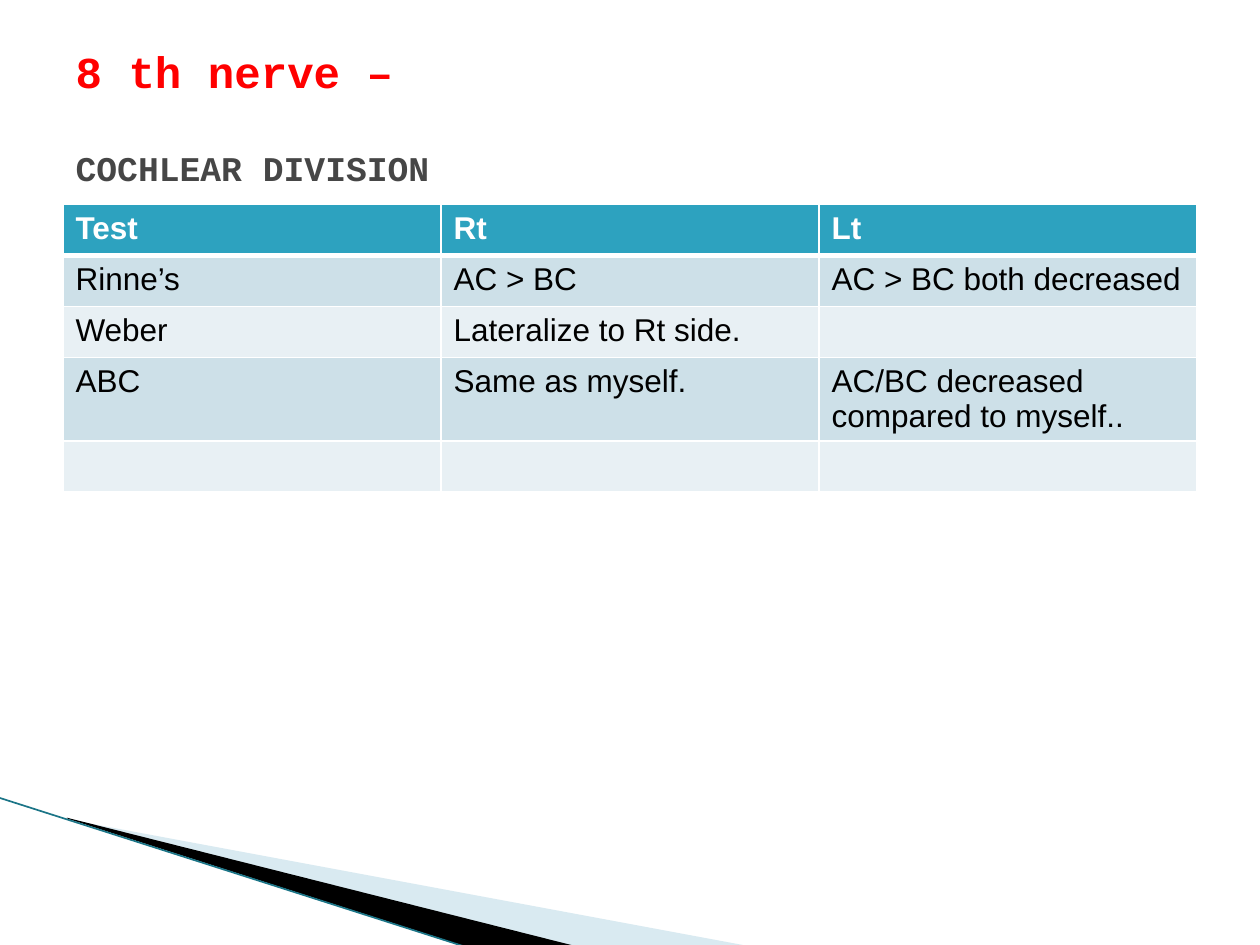
from lxml import etree
from pptx import Presentation
from pptx.dml.color import RGBColor
from pptx.enum import shapes, text
from pptx.oxml.ns import qn
from pptx.util import Pt

HEADS = [("8 th nerve –", 25.2, "FF0000", 0),
         ("COCHLEAR DIVISION", 19.8, "464646", 28.5)]
ROWS = [("Test", "Rt", "Lt"),
        ("Rinne’s", "AC > BC", "AC > BC both decreased"),
        ("Weber", "Lateralize to Rt side.", ""),
        ("ABC", "Same as myself.", "AC/BC decreased compared to myself.."),
        ("", "", "")]
HEIGHTS = [29.2, 29.2, 29.2, 47.4, 29.2]
BANDS = ["E8F0F4", "CDE0E8"]
WEDGES = [([(39.6, 468.4), (428.4, 540.7), (328.3, 540.7), (39.6, 468)], "A0CBDC", 40),
          ([(38.2, 467.3), (329, 540.7), (267.8, 541.4), (38.9, 468)], "000000", 100)]
EDGE = (-0.7, 455.8, 267.1, 541.4)


def rgb(code):
    return RGBColor.from_string(code)


def paint(fill, code):
    fill.solid()
    fill.fore_color.rgb = rgb(code)


def style(font, name, size, code, bold):
    font.name, font.size, font.bold = name, Pt(size), bold
    font.color.rgb = rgb(code)


def border(cell, side, width):
    line = etree.SubElement(cell._tc.get_or_add_tcPr(), qn("a:ln" + side), w=str(Pt(width)))
    fill = etree.SubElement(line, qn("a:solidFill"))
    etree.SubElement(fill, qn("a:srgbClr"), val="FFFFFF")


def add_title(slide):
    title = slide.shapes.title
    title.left, title.top, title.width, title.height = map(Pt, (36, 21.6, 648, 90))
    frame = title.text_frame
    frame.word_wrap = True
    frame.auto_size = text.MSO_AUTO_SIZE.NONE
    frame.vertical_anchor = text.MSO_ANCHOR.MIDDLE
    for i, (words, size, code, gap) in enumerate(HEADS):
        para = frame.add_paragraph() if i else frame.paragraphs[0]
        para.text = words
        para.alignment = text.PP_ALIGN.LEFT
        para.space_before = Pt(gap)
        style(para.font, "Courier New", size, code, True)


def add_tests(slide):
    box = map(Pt, (36, 116.8, 648, sum(HEIGHTS)))
    table = slide.shapes.add_table(len(ROWS), len(ROWS[0]), *box).table
    for r, row in enumerate(ROWS):
        table.rows[r].height = Pt(HEIGHTS[r])
        head = r == 0
        for c, words in enumerate(row):
            cell = table.cell(r, c)
            cell.text = words
            style(cell.text_frame.paragraphs[0].font, "Arial", 18,
                  "FFFFFF" if head else "000000", head)
            for side in "LRTB":
                thick = (r, side) in [(0, "B"), (1, "T")]
                border(cell, side, 3 if thick else 1)
            paint(cell.fill, "2DA2BF" if head else BANDS[r % 2])


def add_wedges(slide):
    for points, code, alpha in WEDGES:
        first, *rest = [(Pt(x), Pt(y)) for x, y in points]
        form = slide.shapes.build_freeform(*first)
        form.add_line_segments(rest)
        wedge = form.convert_to_shape()
        wedge.shadow.inherit = False
        wedge.line.fill.background()
        paint(wedge.fill, code)
        if alpha < 100:
            color = wedge.fill._xPr.find(".//" + qn("a:srgbClr"))
            etree.SubElement(color, qn("a:alpha"), val=str(alpha * 1000))
    edge = slide.shapes.add_connector(shapes.MSO_CONNECTOR.STRAIGHT, *map(Pt, EDGE))
    edge.line.width = Pt(0.95)
    edge.line.color.rgb = rgb("1B7587")
    etree.SubElement(edge._element.spPr, qn("a:effectLst"))


def main():
    deck = Presentation()
    deck.slide_width, deck.slide_height = Pt(720), Pt(540)
    slide = deck.slides.add_slide(deck.slide_layouts[5])
    add_wedges(slide)
    add_tests(slide)
    add_title(slide)
    deck.save("out.pptx")


if __name__ == "__main__":
    main()
